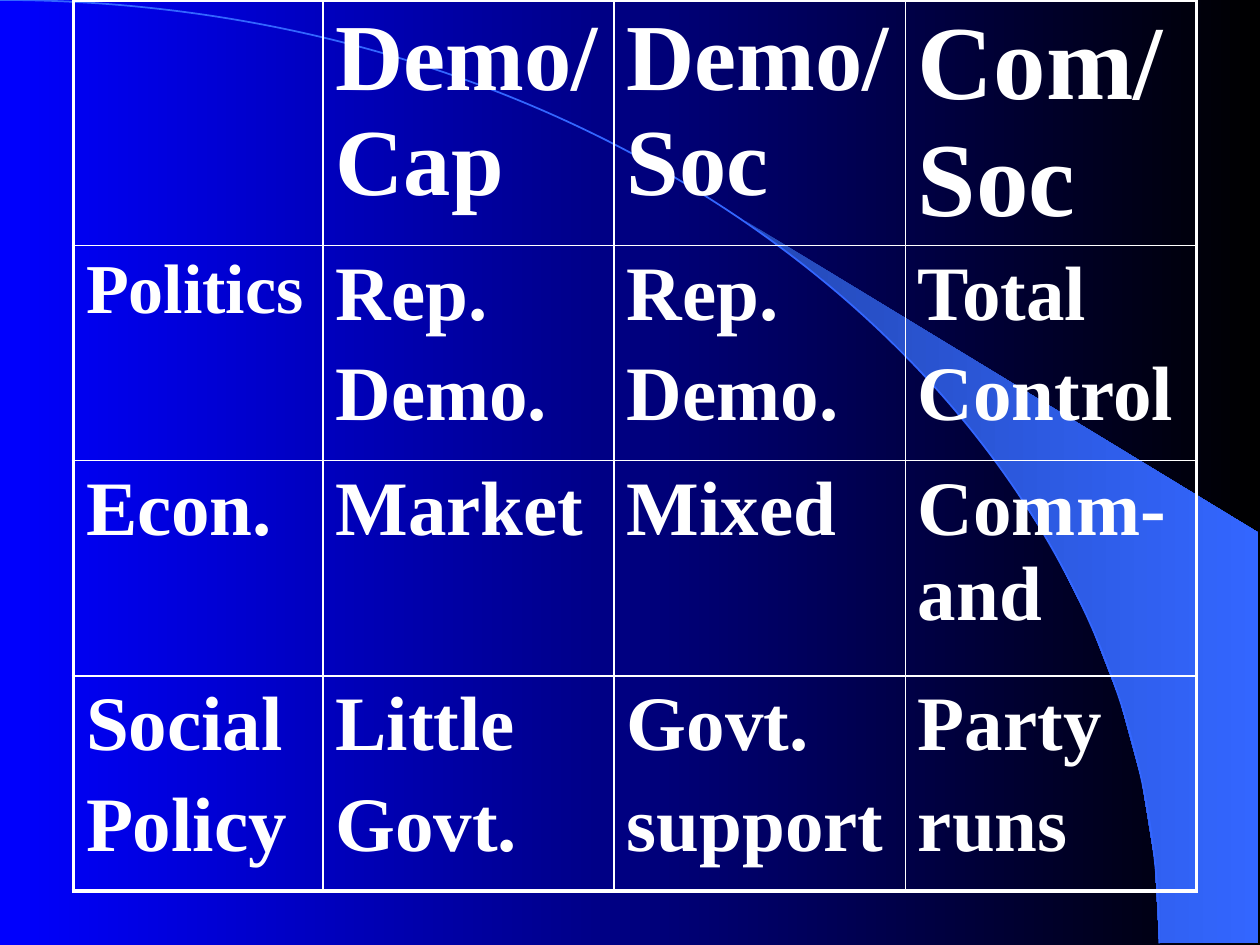
from math import cos, radians, sin

from lxml import etree
from pptx import Presentation, util as u
from pptx.dml.color import RGBColor
from pptx.oxml.ns import qn

# Content: each cell is a list of paragraphs
ROWS = [
    [[], ["Demo/Cap"], ["Demo/Soc"], ["Com/Soc"]],
    [["Politics"], ["Rep.", "Demo."], ["Rep.", "Demo."], ["Total", "Control"]],
    [["Econ."], ["Market"], ["Mixed"], ["Comm-and"]],
    [["Social", "Policy"], ["Little", "Govt."], ["Govt.", "support"],
     ["Party", "runs"]],
]
SIZES = {(0, 1): 54, (0, 2): 54, (0, 3): 60, (1, 0): 40}
SIZE = 44
COLS = [5.03, 5.87, 5.87, 5.87]
HIGH = 4.34
LEFT = 1.48
THIN, THICK = 1, 2.25
WHITE, BLUE = "FFFFFF", "3366FF"
# Backdrop, in cm: a quarter ellipse and the wedge beside it
RX, RY = 23.37, 19.02
EDGE, SIDE = 25.37, 10.74
BEND = 0.55  # handle length of a quarter ellipse


def rgb(code):
    return RGBColor.from_string(code)


def blend(fill, *codes):
    fill.gradient()
    fill.gradient_angle = 0
    for stop, code, pos in zip(fill.gradient_stops, codes, (0, 1)):
        stop.color.rgb = rgb(code)
        stop.position = pos


def arc(first, last, step):
    return [(RX * sin(radians(a)), RY * (1 - cos(radians(a))))
            for a in range(first, last + 1, step)]


def outline(slide, points, close):
    spots = [(u.Cm(x), u.Cm(y)) for x, y in points]
    pen = slide.shapes.build_freeform(*spots[0])
    pen.add_line_segments(spots[1:], close=close)
    shape = pen.convert_to_shape()
    shape.shadow.inherit = False
    return shape


def bend(shape):
    """Turn the three line segments into one Bezier curve."""
    track = next(shape._element.iter(qn("a:path")))
    curve = etree.SubElement(track, qn("a:cubicBezTo"))
    for line in track.findall(qn("a:lnTo")):
        curve.append(line[0])
        track.remove(line)


def border(cell, sides):
    props = cell._tc.get_or_add_tcPr()
    for spot, (side, width) in enumerate(sides.items()):
        line = etree.Element(qn("a:ln" + side), w=str(u.Pt(width)))
        fill = etree.SubElement(line, qn("a:solidFill"))
        etree.SubElement(fill, qn("a:srgbClr"), val=WHITE)
        props.insert(spot, line)


def write(cell, lines, size):
    style = {"name": "Times New Roman", "size": u.Pt(size), "bold": True}
    cell.text = "\n".join(lines)
    for para in cell.text_frame.paragraphs:
        # Space before, as a share of the line
        space = etree.SubElement(para._p.get_or_add_pPr(), qn("a:spcBef"))
        etree.SubElement(space, qn("a:spcPct"), val="20000")
        for run in para.runs:
            for key, value in style.items():
                setattr(run.font, key, value)
            run.font.color.rgb = rgb(WHITE)


def main():
    deck = Presentation()
    deck.slide_width, deck.slide_height = u.Cm(25.4), u.Cm(19.05)
    slide = deck.slides.add_slide(deck.slide_layouts[6])
    blend(slide.background.fill, "0000FF", "000000")

    # Wedge, then the curve
    wedge = outline(slide, arc(40, 90, 5) + [(EDGE, RY), (EDGE, SIDE)], True)
    blend(wedge.fill, "2449B6", BLUE)
    wedge.line.fill.background()
    curve = outline(slide, [(0, 0), (RX * BEND, 0), (RX, RY * (1 - BEND)),
                            (RX, RY)], False)
    bend(curve)
    curve.fill.background()
    curve.line.color.rgb = rgb(BLUE)
    curve.line.width = u.Pt(1)

    # Table
    rows, cols = len(ROWS), len(COLS)
    table = slide.shapes.add_table(rows, cols, u.Cm(LEFT), 0, u.Cm(sum(COLS)),
                                   u.Cm(HIGH * rows)).table
    table.first_row = table.horz_banding = False
    for col, wide in zip(table.columns, COLS):
        col.width = u.Cm(wide)
    for r, row in enumerate(ROWS):
        for c, lines in enumerate(row):
            cell = table.cell(r, c)
            cell.fill.background()
            outer = {"L": c == 0, "R": c == cols - 1,
                     "T": r == 0, "B": r == rows - 1}
            border(cell, {k: THICK if v else THIN for k, v in outer.items()})
            write(cell, lines, SIZES.get((r, c), SIZE))

    deck.save("out.pptx")


if __name__ == "__main__":
    main()
